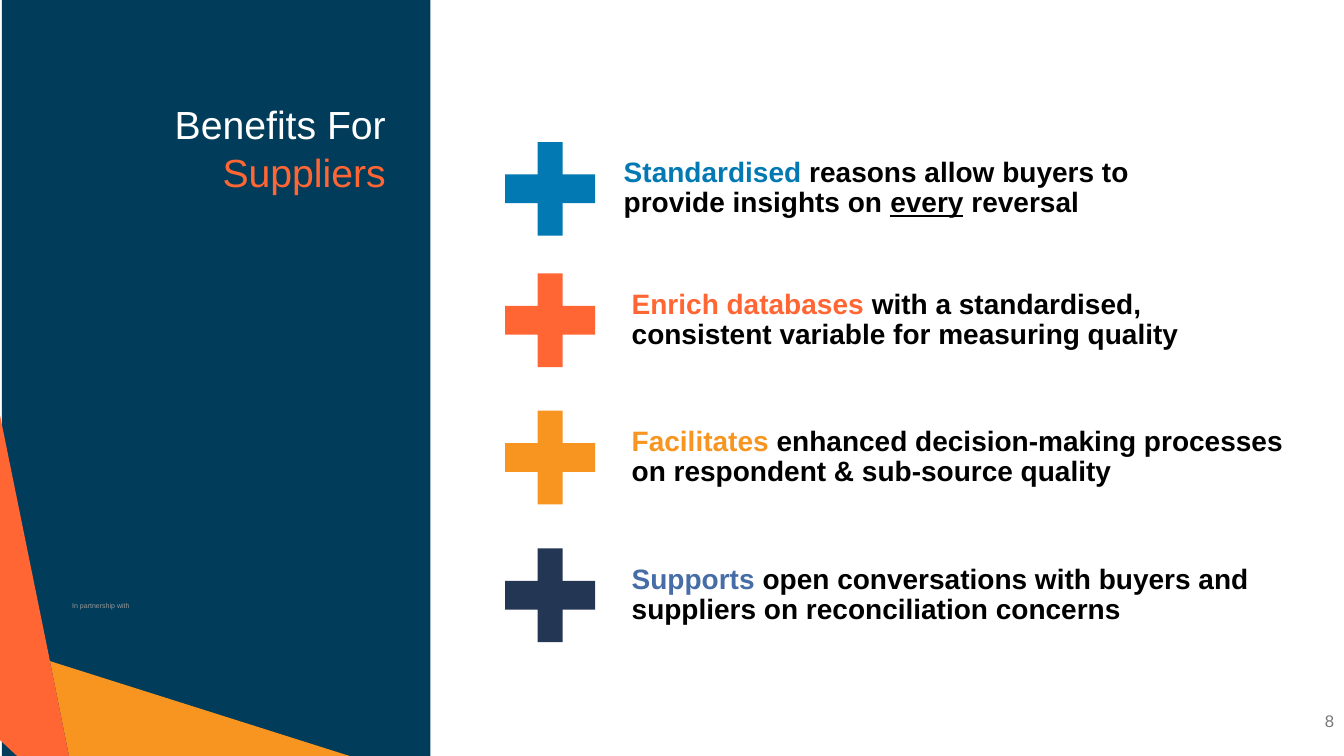
from dataclasses import dataclass

from pptx import Presentation
from pptx import util as u
from pptx.dml import color
from pptx.enum import shapes, text

NAVY, BLUE, CORAL, AMBER = "013C5A", "0279B3", "FF6633", "F79520"
INDIGO, STEEL, WHITE, BLACK = "233653", "466DA6", "FFFFFF", "000000"
WIDTH, HEIGHT = 33.87, 19.05


@dataclass
class Run:
    words: str
    colour: str = BLACK
    underline: bool = False


@dataclass
class Benefit:
    top: float
    plus_colour: str
    text_left: float
    text_width: float
    runs: list[Run]


@dataclass
class Facet:
    colour: str
    corners: list[tuple[float, float]]


BENEFITS = [
    Benefit(3.58, BLUE, 15.47, 14.58, [
        Run("Standardised", BLUE),
        Run(" reasons allow buyers to provide insights on "),
        Run("every", underline=True),
        Run(" reversal"),
    ]),
    Benefit(6.89, CORAL, 15.67, 14.88, [
        Run("Enrich databases ", CORAL),
        Run("with a standardised, consistent variable for measuring quality"),
    ]),
    Benefit(10.35, AMBER, 15.67, 17.32, [
        Run("Facilitates", AMBER),
        Run(" enhanced decision-making processes on respondent & sub-source quality"),
    ]),
    Benefit(13.82, INDIGO, 15.67, 17.32, [
        Run("Supports", STEEL),
        Run(" open conversations with buyers and suppliers on reconciliation concerns"),
    ]),
]

FACETS = [
    Facet(AMBER, [(1.26, 16.66), (8.81, HEIGHT), (1.74, HEIGHT)]),
    Facet(CORAL, [(0, 10.46), (1.26, 16.66), (1.74, HEIGHT), (0.43, HEIGHT), (0, 18.65)]),
]


def rgb(value: str) -> color.RGBColor:
    return color.RGBColor.from_string(value)


def paint(shape, colour: str) -> None:
    shape.fill.solid()
    shape.fill.fore_color.rgb = rgb(colour)
    shape.line.fill.background()
    shape.shadow.inherit = False


def add_preset(slide, kind, left: float, top: float, width: float, height: float, colour: str):
    shape = slide.shapes.add_shape(kind, u.Cm(left), u.Cm(top), u.Cm(width), u.Cm(height))
    paint(shape, colour)
    return shape


def add_facet(slide, facet: Facet) -> None:
    corners = [(u.Cm(x), u.Cm(y)) for x, y in facet.corners]
    outline = slide.shapes.build_freeform(*corners[0])
    outline.add_line_segments(corners[1:], close=True)
    paint(outline.convert_to_shape(), facet.colour)


def add_words(slide, runs: list[Run], left: float, top: float, width: float, height: float, *,
              size: float, bold: bool = False, align=text.PP_ALIGN.LEFT,
              anchor=text.MSO_ANCHOR.TOP, spacing: float = 1.0, inset: bool = True) -> None:
    frame = slide.shapes.add_textbox(u.Cm(left), u.Cm(top), u.Cm(width), u.Cm(height)).text_frame
    frame.word_wrap = True
    frame.vertical_anchor = anchor
    if not inset:
        frame.margin_left = frame.margin_right = frame.margin_top = frame.margin_bottom = 0
    paragraph = frame.paragraphs[0]
    paragraph.alignment = align
    paragraph.line_spacing = spacing
    for part in runs:
        run = paragraph.add_run()
        run.text = part.words
        run.font.name = "Arial"
        run.font.size = u.Pt(size)
        run.font.bold = bold
        run.font.underline = part.underline
        run.font.color.rgb = rgb(part.colour)


def add_benefit(slide, benefit: Benefit) -> None:
    plus = add_preset(slide, shapes.MSO_SHAPE.CROSS, 12.73, benefit.top, 2.27, 2.36,
                      benefit.plus_colour)
    plus.adjustments[0] = 0.36
    add_words(slide, benefit.runs, benefit.text_left, benefit.top + 0.29, benefit.text_width, 1.8,
              size=20, bold=True, spacing=0.9)


def main() -> None:
    deck = Presentation()
    deck.slide_width, deck.slide_height = u.Cm(WIDTH), u.Cm(HEIGHT)
    slide = deck.slides.add_slide(deck.slide_layouts[6])
    add_preset(slide, shapes.MSO_SHAPE.RECTANGLE, 0.05, 0, 10.8, HEIGHT, NAVY)
    for facet in FACETS:
        add_facet(slide, facet)
    add_words(slide, [Run("In partnership with", "999999")], 1.57, 15.04, 2.67, 0.48, size=5)
    add_words(slide, [Run("Benefits For ", WHITE), Run("Suppliers", CORAL)], 3.07, 2.54, 6.65, 8.56,
              size=28, align=text.PP_ALIGN.RIGHT, inset=False)
    add_words(slide, [Run("8", "797979")], 26.25, 17.65, 7.62, 1.02, size=12,
              align=text.PP_ALIGN.RIGHT, anchor=text.MSO_ANCHOR.MIDDLE)
    for benefit in BENEFITS:
        add_benefit(slide, benefit)
    deck.save("out.pptx")


if __name__ == "__main__":
    main()
